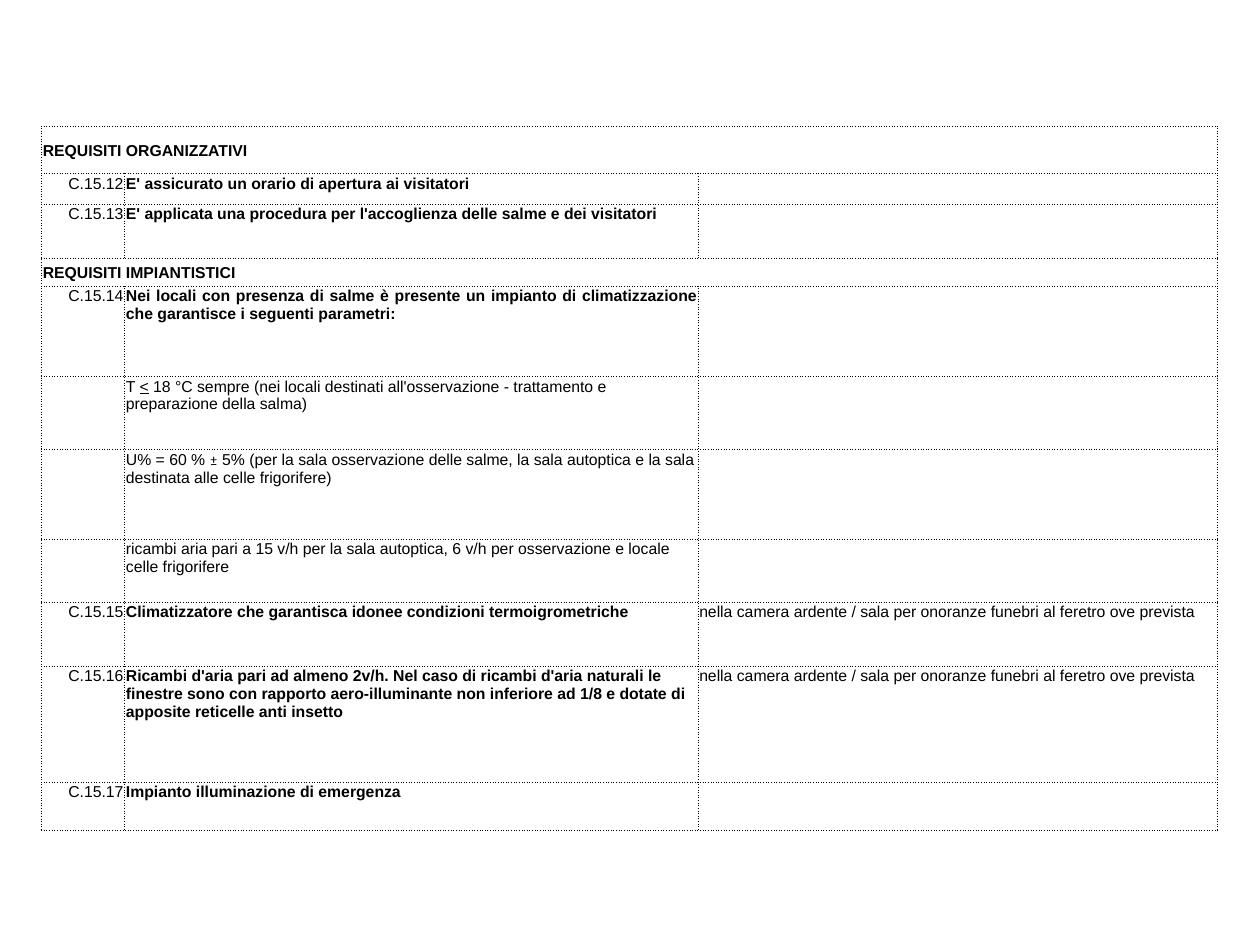
from lxml.etree import SubElement
from pptx import Presentation
from pptx.dml.color import RGBColor
from pptx.enum.text import MSO_ANCHOR, PP_ALIGN
from pptx.oxml.ns import qn
from pptx.util import Inches, Pt

COLORS = {"ink": "000000", "paper": "FFFFFF"}
COLUMNS = [0.66, 4.55, 4.12]
CHAPEL = "nella camera ardente / sala per onoranze funebri al feretro ove prevista"

ROWS = [
    (0.38, "REQUISITI ORGANIZZATIVI"),
    (0.24, "C.15.12", "E' assicurato un orario di apertura ai visitatori", ""),
    (0.43, "C.15.13", "E' applicata una procedura per l'accoglienza delle salme e dei visitatori", ""),
    (0.22, "REQUISITI IMPIANTISTICI"),
    (0.72, "C.15.14", "Nei locali con presenza di salme è presente un impianto di climatizzazione "
     "che garantisce i seguenti parametri:", ""),
    (0.58, "", ["T ", "<", " 18 °C sempre (nei locali destinati all'osservazione - trattamento e "
                "preparazione della salma)"], ""),
    (0.71, "", ["U% = 60 % ", "±", " 5% (per la sala osservazione delle salme, la sala autoptica "
                "e la sala destinata alle celle frigorifere)"], ""),
    (0.5, "", "ricambi aria pari a 15 v/h per la sala autoptica, 6 v/h per osservazione e locale "
     "celle frigorifere", ""),
    (0.51, "C.15.15", "Climatizzatore che garantisca idonee condizioni termoigrometriche", CHAPEL),
    (0.92, "C.15.16", "Ricambi d'aria pari ad almeno 2v/h. Nel caso di ricambi d'aria naturali le "
     "finestre sono con rapporto aero-illuminante non inferiore ad 1/8 e dotate di apposite "
     "reticelle anti insetto", CHAPEL),
    (0.38, "C.15.17", "Impianto illuminazione di emergenza", ""),
]
JUSTIFIED = {"C.15.14"}


class SlideBuilder:
    font = "Arial"
    symbol_font = "Karla"
    size = 9
    line = 0.5

    def __init__(self, prs):
        self.s = prs.slides.add_slide(prs.slide_layouts[6])
        fill = self.s.background.fill
        fill.solid()
        fill.fore_color.rgb = RGBColor.from_string(COLORS["paper"])

    def border(self, cell):
        tc_pr = cell._tc.get_or_add_tcPr()
        for side in ("lnL", "lnR", "lnT", "lnB"):
            ln = SubElement(tc_pr, qn(f"a:{side}"), w=str(Pt(self.line)))
            solid = SubElement(ln, qn("a:solidFill"))
            SubElement(solid, qn("a:srgbClr"), val=COLORS["ink"])
            SubElement(ln, qn("a:prstDash"), val="sysDot")

    def text(self, cell, content, bold, align):
        p = cell.text_frame.paragraphs[0]
        p.alignment = align
        if not content:
            SubElement(p._p, qn("a:endParaRPr"), sz=str(self.size * 100))
            return
        for part in [content] if isinstance(content, str) else content:
            r = p.add_run()
            r.text = part
            r.font.size = Pt(self.size)
            r.font.name = self.symbol_font if part == "±" else self.font
            r.font.bold = bold
            r.font.underline = part == "<"
            r.font.color.rgb = RGBColor.from_string(COLORS["ink"])

    def cell(self, cell, content="", bold=False, align=PP_ALIGN.LEFT, anchor=MSO_ANCHOR.TOP):
        cell.margin_left = cell.margin_right = cell.margin_top = Inches(0.01)
        cell.margin_bottom = 0
        cell.vertical_anchor = anchor
        self.border(cell)
        cell.fill.background()
        self.text(cell, content, bold, align)

    def table(self, left, top, columns, rows):
        height = sum(row[0] for row in rows)
        frame = self.s.shapes.add_table(
            len(rows), len(columns), Inches(left), Inches(top),
            Inches(sum(columns)), Inches(height))
        table = frame.table
        table.first_row = table.horz_banding = False
        for column, width in zip(table.columns, columns):
            column.width = Inches(width)
        for i, (row_height, *contents) in enumerate(rows):
            table.rows[i].height = Inches(row_height)
            cells = list(table.rows[i].cells)
            if len(contents) == 1:
                cells[0].merge(cells[-1])
                self.cell(cells[0], contents[0], True, anchor=MSO_ANCHOR.MIDDLE)
                for covered in cells[1:]:
                    self.cell(covered)
                continue
            code, requirement, note = contents
            align = PP_ALIGN.JUSTIFY if code in JUSTIFIED else PP_ALIGN.LEFT
            self.cell(cells[0], code, align=PP_ALIGN.RIGHT)
            self.cell(cells[1], requirement, bool(code), align)
            self.cell(cells[2], note)


def main():
    prs = Presentation()
    prs.slide_width, prs.slide_height = Inches(10), Inches(7.5)
    SlideBuilder(prs).table(0.33, 1, COLUMNS, ROWS)
    prs.save("out.pptx")


if __name__ == "__main__":
    main()
